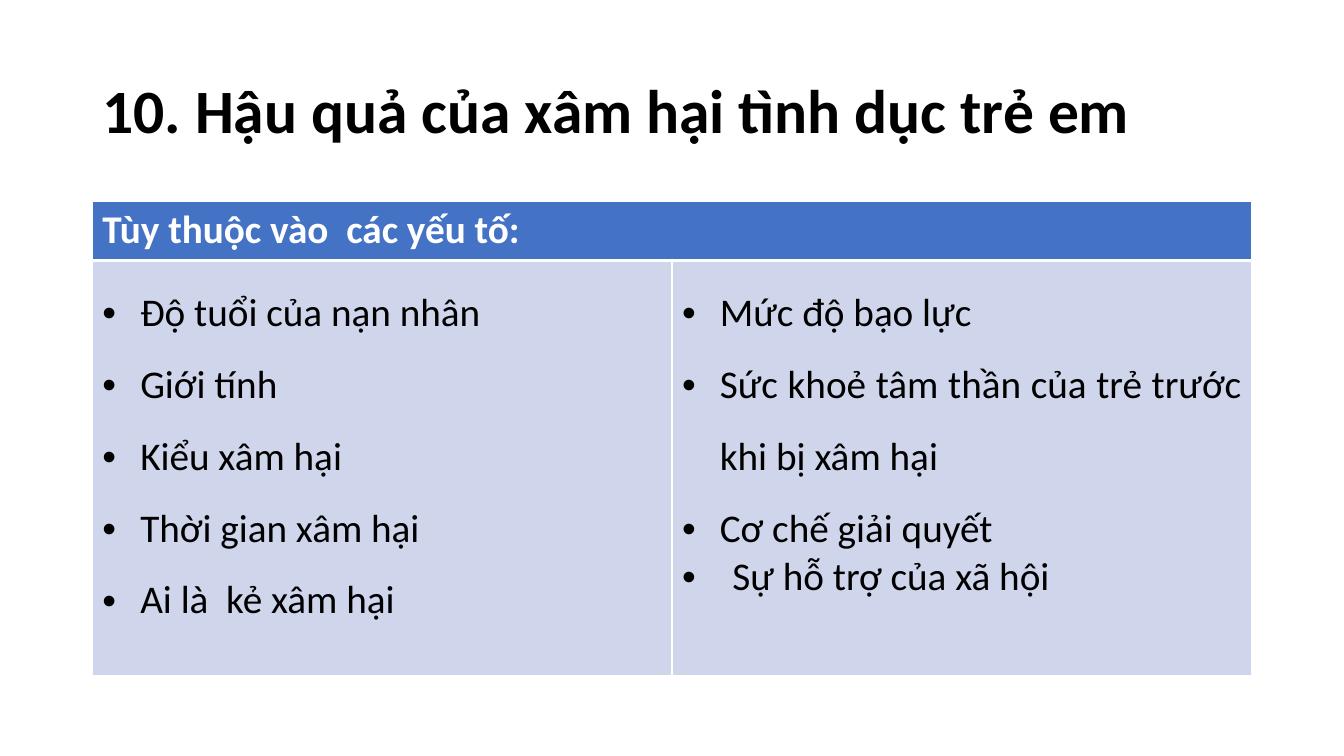
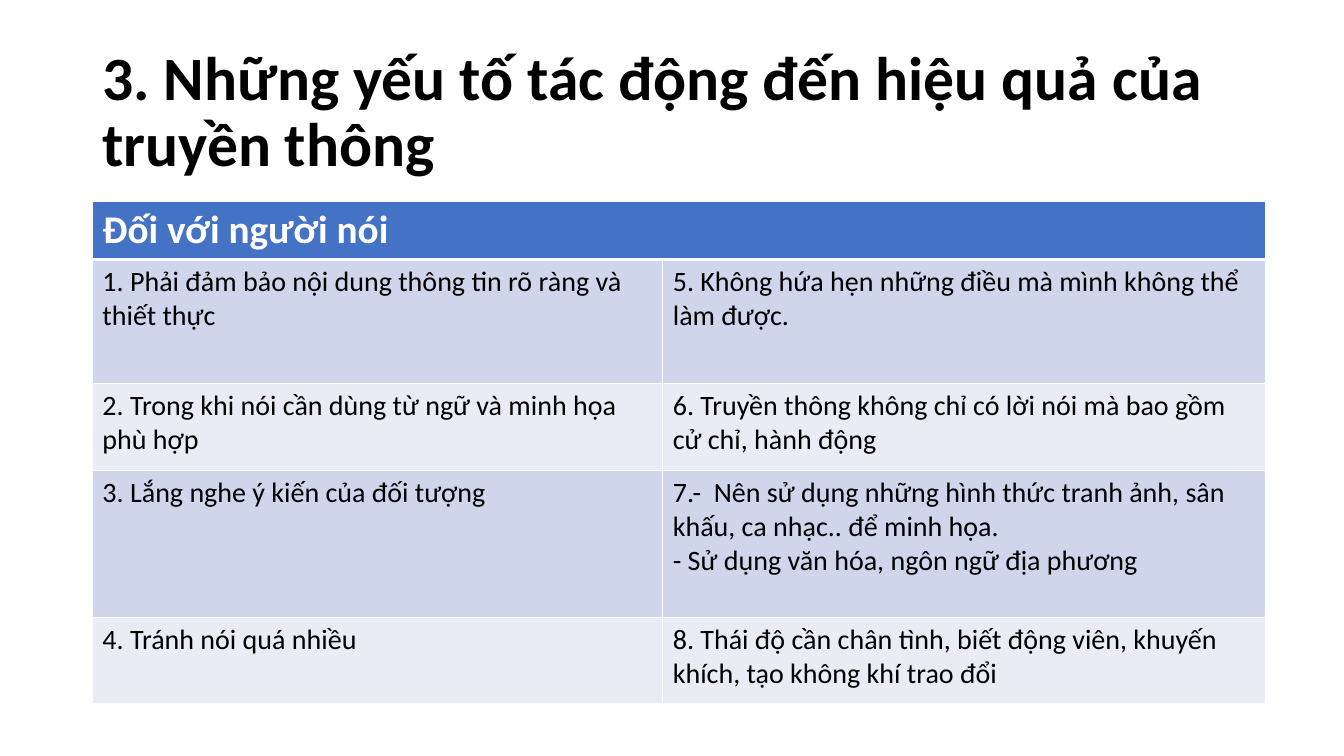
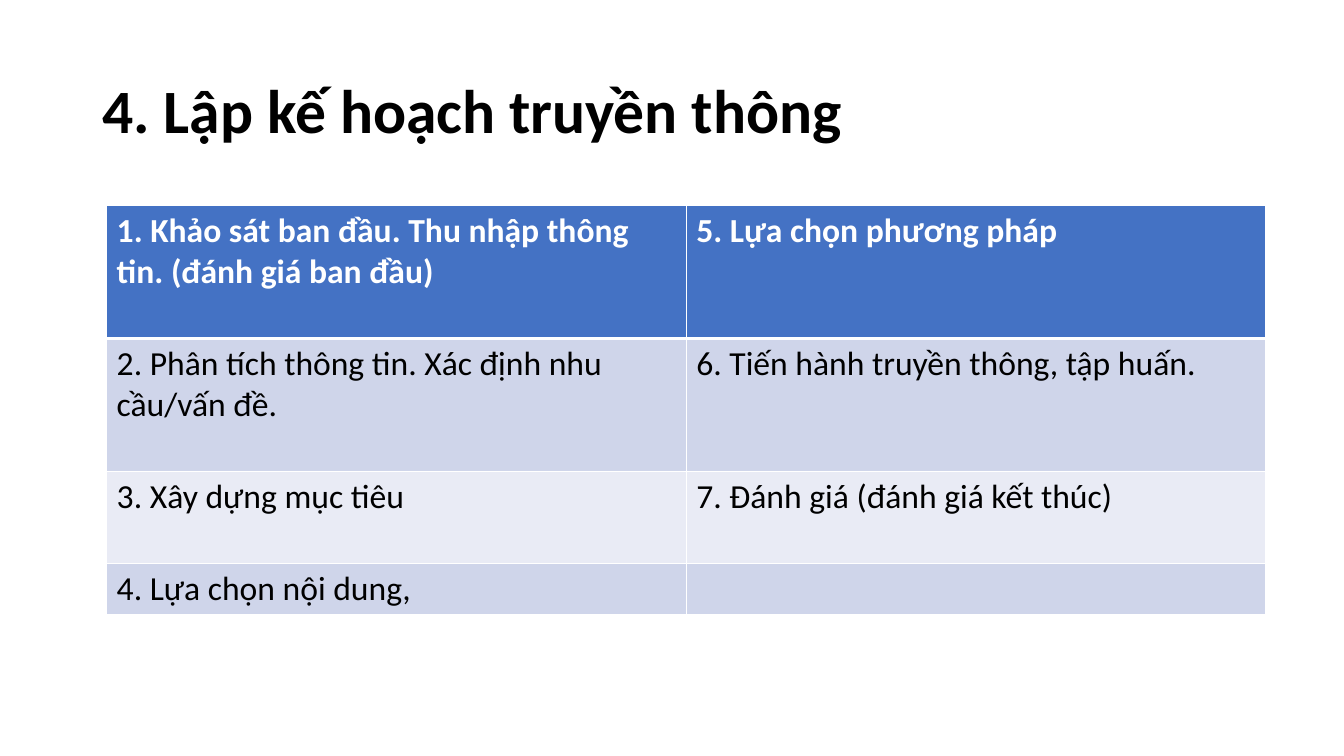
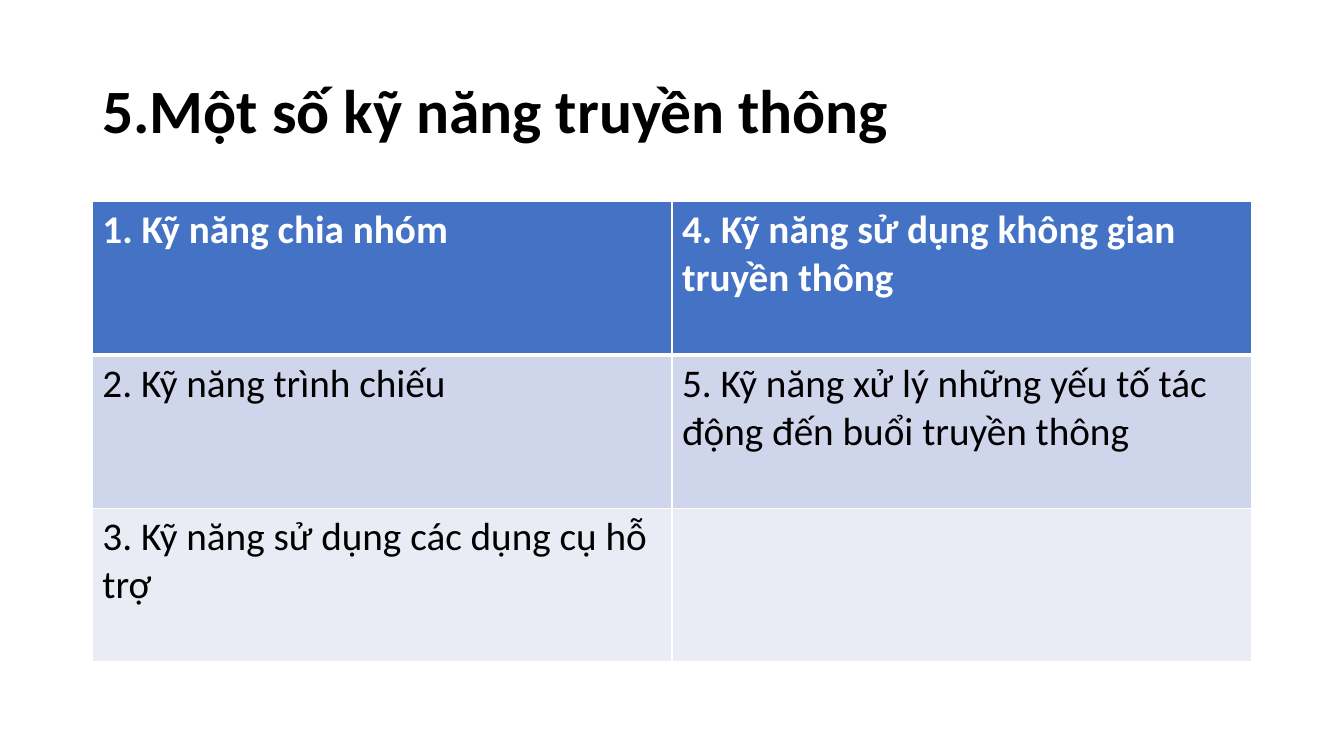
import dataclasses

import lxml.etree
import pptx
import pptx.dml.color
import pptx.enum.text
import pptx.oxml.ns
import pptx.util

RGB = pptx.dml.color.RGBColor.from_string
ALIGN = pptx.enum.text.PP_ALIGN
qn = pptx.oxml.ns.qn


@dataclasses.dataclass(frozen=True)
class Theme:
    font: str = "Calibri"
    ink: str = "000000"
    paper: str = "FFFFFF"
    header: str = "4472C4"
    bands: tuple = ("CFD5EA", "E9EBF5")
    title: int = 44
    large: int = 28
    medium: int = 24
    small: int = 20
    rule: int = 1
    header_rule: int = 3


THEME = Theme()

# The slide is a grid of 160 columns by 90 rows.
prs = pptx.Presentation()
prs.slide_width = pptx.util.Inches(13.33)
prs.slide_height = pptx.util.Inches(7.5)
COL = prs.slide_width / 160
ROW = prs.slide_height / 90
LEFT, WIDTH, TOP = 11, 138, 24
TITLE_TOP, TITLE_ROWS = 4.8, 17.4
HALVES = (WIDTH / 2, WIDTH / 2)

# Paragraph kinds: format values and hanging indent in columns.
KINDS = {
    "plain": ({"alignment": ALIGN.LEFT}, 0),
    "point": ({"alignment": ALIGN.JUSTIFY, "line_spacing": 1.5}, 4.5),
    "tight point": ({"alignment": ALIGN.LEFT}, 6),
}

SLIDES = [
    {
        "title": "10. Hậu quả của xâm hại tình dục trẻ em",
        "at": (LEFT, TOP), "cols": HALVES, "rows": (7, 49.4),
        "sizes": (THEME.large, THEME.large),
        "cells": [
            ["Tùy thuộc vào  các yếu tố:"],
            [
                [("point", "Độ tuổi của nạn nhân"),
                 ("point", "Giới tính"),
                 ("point", "Kiểu xâm hại"),
                 ("point", "Thời gian xâm hại"),
                 ("point", "Ai là  kẻ xâm hại")],
                [("point", "Mức độ bạo lực"),
                 ("point", "Sức khoẻ tâm thần của trẻ trước khi bị xâm hại"),
                 ("point", "Cơ chế giải quyết"),
                 ("tight point", "Sự hỗ trợ của xã hội")],
            ],
        ],
    },
    {
        "title": "3. Những yếu tố tác động đến hiệu quả của truyền thông",
        "at": (LEFT, TOP), "cols": (67.9, 71.8),
        "rows": (6.9, 14.8, 10.3, 17.5, 10.3),
        "sizes": (THEME.large, THEME.small),
        "cells": [
            ["Đối với người nói"],
            ["1. Phải đảm bảo nội dung thông tin rõ ràng và thiết thực",
             "5. Không hứa hẹn những điều mà mình không thể làm được."],
            ["2. Trong khi nói cần dùng từ ngữ và minh họa phù hợp",
             "6. Truyền thông không chỉ có lời nói mà bao gồm cử chỉ, hành động"],
            ["3. Lắng nghe ý kiến của đối tượng",
             [("plain", "7.-  Nên sử dụng những hình thức tranh ảnh, sân khấu, "
                        "ca nhạc.. để minh họa."),
              ("plain", "- Sử dụng văn hóa, ngôn ngữ địa phương")]],
            ["4. Tránh nói quá nhiều",
             "8. Thái độ cần chân tình, biết động viên, khuyến khích, "
             "tạo không khí trao đổi"],
        ],
    },
    {
        "title": "4. Lập kế hoạch truyền thông",
        "at": (12.7, 24.5), "cols": HALVES, "rows": (15.8, 15.8, 11, 6.1),
        "sizes": (THEME.medium, THEME.medium),
        "cells": [
            ["1. Khảo sát ban đầu. Thu nhập thông tin. (đánh giá ban đầu)",
             "5. Lựa chọn phương pháp"],
            ["2. Phân tích thông tin. Xác định nhu cầu/vấn đề.",
             "6. Tiến hành truyền thông, tập huấn."],
            ["3. Xây dựng mục tiêu", "7. Đánh giá (đánh giá kết thúc)"],
            ["4. Lựa chọn nội dung,", ""],
        ],
    },
    {
        "title": "5.Một số kỹ năng truyền thông",
        "at": (LEFT, TOP), "cols": HALVES, "rows": (18.25,) * 3,
        "sizes": (THEME.large, THEME.large),
        "cells": [
            ["1. Kỹ năng chia nhóm", "4. Kỹ năng sử dụng không gian truyền thông"],
            ["2. Kỹ năng trình chiếu",
             "5. Kỹ năng xử lý những yếu tố tác động đến buổi truyền thông"],
            ["3. Kỹ năng sử dụng các dụng cụ hỗ trợ", ""],
        ],
    },
]


def write(p, text, size, color, bold, kind="plain"):
    """Fill one paragraph, with a hanging bullet if its kind has an indent."""
    values, indent = KINDS[kind]
    if indent:
        pPr = p._p.get_or_add_pPr()
        pPr.set("marL", str(int(indent * COL)))
        pPr.set("indent", str(-int(indent * COL)))
        lxml.etree.SubElement(pPr, qn("a:buFont"), typeface="Arial")
        lxml.etree.SubElement(pPr, qn("a:buChar"), char="•")
    for name, value in values.items():
        setattr(p, name, value)
    r = p.add_run()
    r.text = text
    for name, value in {"name": THEME.font, "size": pptx.util.Pt(size), "bold": bold}.items():
        setattr(r.font, name, value)
    r.font.color.rgb = RGB(color)


def draw_borders(cell, row):
    """Rule all four sides, heavier between the header and the body."""
    tcPr = cell._tc.get_or_add_tcPr()
    for i, side in enumerate(("lnL", "lnR", "lnT", "lnB")):
        heavy = (row, side) in ((0, "lnB"), (1, "lnT"))
        points = THEME.header_rule if heavy else THEME.rule
        ln = lxml.etree.Element(qn("a:" + side), w=str(pptx.util.Pt(points)))
        fill = lxml.etree.SubElement(ln, qn("a:solidFill"))
        lxml.etree.SubElement(fill, qn("a:srgbClr"), val=THEME.paper)
        tcPr.insert(i, ln)


for page in SLIDES:
    s = prs.slides.add_slide(prs.slide_layouts[6])

    tf = s.shapes.add_textbox(int(LEFT * COL), int(TITLE_TOP * ROW),
                              int(WIDTH * COL), int(TITLE_ROWS * ROW)).text_frame
    tf.word_wrap = True
    tf.vertical_anchor = pptx.enum.text.MSO_ANCHOR.MIDDLE
    write(tf.paragraphs[0], page["title"], THEME.title, THEME.ink, True)
    tf.paragraphs[0].line_spacing = 0.9

    x, y = page["at"]
    cols, rows, cells = page["cols"], page["rows"], page["cells"]
    table = s.shapes.add_table(len(rows), len(cols), int(x * COL), int(y * ROW),
                               int(sum(cols) * COL), int(sum(rows) * ROW)).table
    table.horz_banding = False
    for column, width in zip(table.columns, cols):
        column.width = int(width * COL)
    for line, height in zip(table.rows, rows):
        line.height = int(height * ROW)
    if len(cells[0]) == 1:
        table.cell(0, 0).merge(table.cell(0, len(cols) - 1))

    for i, line in enumerate(table.rows):
        is_header = i == 0
        fill = THEME.header if is_header else THEME.bands[(i - 1) % 2]
        color = THEME.paper if is_header else THEME.ink
        size = page["sizes"][0 if is_header else 1]
        for cell in line.cells:
            cell.fill.solid()
            cell.fill.fore_color.rgb = RGB(fill)
            draw_borders(cell, i)
        for cell, content in zip(line.cells, cells[i]):
            if not content:
                continue
            paragraphs = [("plain", content)] if isinstance(content, str) else content
            tf = cell.text_frame
            for n, (kind, text) in enumerate(paragraphs):
                p = tf.add_paragraph() if n else tf.paragraphs[0]
                write(p, text, size, color, is_header, kind)

prs.save("out.pptx")
